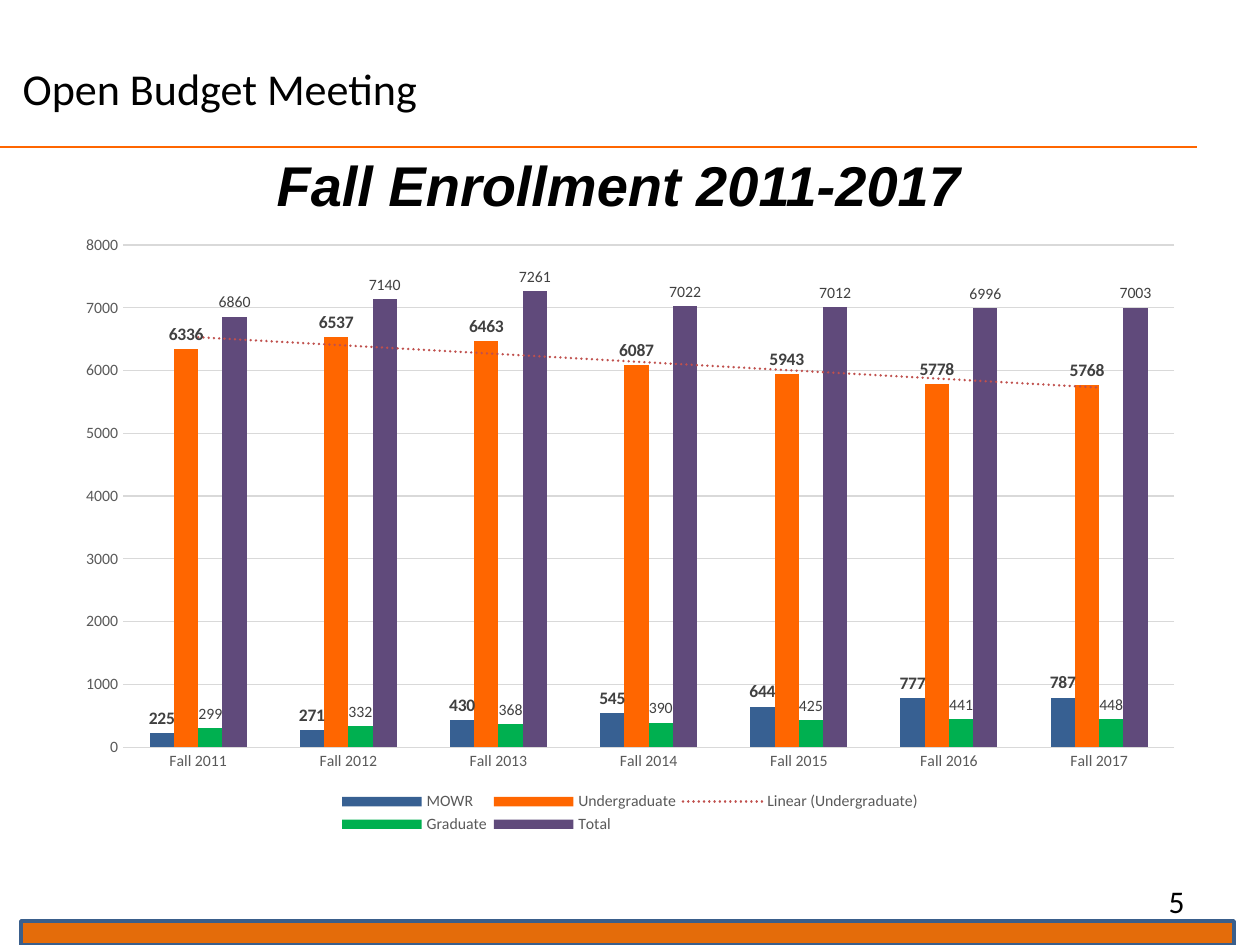
"""Build the fall enrollment slide with its column chart and trend line."""
import pptx
import pptx.chart.data
import pptx.dml.color
import pptx.enum.chart
import pptx.enum.shapes
import pptx.enum.text
import pptx.oxml
import pptx.oxml.ns
import pptx.util

RGBColor = pptx.dml.color.RGBColor
BLACK = RGBColor(0x00, 0x00, 0x00)
ORANGE = RGBColor(0xFF, 0x66, 0x00)
FOOTER_FILL = RGBColor(0xE4, 0x6C, 0x0A)
FOOTER_LINE = RGBColor(0x3A, 0x5F, 0x8C)
BLUE = RGBColor(0x37, 0x60, 0x92)
GREEN = RGBColor(0x00, 0xB0, 0x50)
PURPLE = RGBColor(0x60, 0x4A, 0x7B)
TREND_RED = RGBColor(0xC0, 0x50, 0x4D)
AXIS_GRAY = RGBColor(0x59, 0x59, 0x59)
LABEL_GRAY = RGBColor(0x40, 0x40, 0x40)
GRID_GRAY = RGBColor(0xD9, 0xD9, 0xD9)
PX = 914400 / 126
ALIGN = pptx.enum.text.PP_ALIGN
NAMESPACES = pptx.oxml.ns.nsdecls("c", "a")


def px(*lengths):
    return [round(length * PX) for length in lengths]


def style(font, size, color, name="Calibri", bold=False, italic=False):
    font.size = pptx.util.Pt(size)
    font.color.rgb = color
    font.name = name
    font.bold = bold
    font.italic = italic


deck = pptx.Presentation()
deck.slide_width, deck.slide_height = px(1260, 945)
page = deck.slides.add_slide(deck.slide_layouts[5])

title = page.shapes.title
title.left, title.top, title.width, title.height = px(10, 56, 766, 63)
heading = page.shapes.add_textbox(*px(52, 159, 1134, 50))
number = page.shapes.add_textbox(*px(903, 876, 294, 50))
for box, text, align, size, name, strong in [
    (title, "Open Budget Meeting", ALIGN.LEFT, 25.2, "Calibri", False),
    (heading, "Fall Enrollment 2011-2017", ALIGN.CENTER, 32, "Arial", True),
    (number, "5", ALIGN.RIGHT, 18, "Calibri", False),
]:
    box.text_frame.word_wrap = True
    box.text_frame.vertical_anchor = pptx.enum.text.MSO_ANCHOR.MIDDLE
    para = box.text_frame.paragraphs[0]
    para.alignment = align
    span = para.add_run()
    span.text = text
    style(span.font, size, BLACK, name, strong, strong)

rule = page.shapes.add_connector(
    pptx.enum.shapes.MSO_CONNECTOR.STRAIGHT, *px(0, 147, 1197, 147))
rule.line.color.rgb = ORANGE
rule.line.width = pptx.util.Pt(1.5)
rule._element.spPr.append(pptx.oxml.parse_xml(f"<a:effectLst {NAMESPACES}/>"))

footer = page.shapes.add_shape(
    pptx.enum.shapes.MSO_SHAPE.RECTANGLE, *px(21, 921, 1213, 24))
footer.shadow.inherit = False
footer.fill.solid()
footer.fill.fore_color.rgb = FOOTER_FILL
footer.line.color.rgb = FOOTER_LINE
footer.line.width = pptx.util.Pt(2)

enrollment = [
    ("MOWR", [225, 271, 430, 545, 644, 777, 787], BLUE, 10, True),
    ("Undergraduate", [6336, 6537, 6463, 6087, 5943, 5778, 5768], ORANGE, 10, True),
    ("Graduate", [299, 332, 368, 390, 425, 441, 448], GREEN, 9, False),
    ("Total", [6860, 7140, 7261, 7022, 7012, 6996, 7003], PURPLE, 9, False),
]
data = pptx.chart.data.CategoryChartData()
data.categories = [f"Fall {year}" for year in range(2011, 2018)]
for name, values, *_ in enrollment:
    data.add_series(name, values)
chart = page.shapes.add_chart(
    pptx.enum.chart.XL_CHART_TYPE.COLUMN_CLUSTERED, *px(63, 224, 1134, 620), data).chart
style(chart.font, 10, BLACK)
chart.has_title = False
chart.has_legend = True
chart.legend.position = pptx.enum.chart.XL_LEGEND_POSITION.BOTTOM
chart.legend.include_in_layout = False
style(chart.legend.font, 9, AXIS_GRAY)

plot = chart.plots[0]
plot.gap_width = 219
plot.overlap = 0
plot.vary_by_categories = False
for series, (name, values, color, size, bold) in zip(plot.series, enrollment):
    series.format.fill.solid()
    series.format.fill.fore_color.rgb = color
    labels = series.data_labels
    labels.show_value = True
    labels.position = pptx.enum.chart.XL_LABEL_POSITION.OUTSIDE_END
    style(labels.font, size, LABEL_GRAY, bold=bold)

trend = pptx.oxml.parse_xml(
    f'<c:trendline {NAMESPACES}><c:spPr><a:ln w="19050" cap="rnd"><a:solidFill>'
    f'<a:srgbClr val="{TREND_RED}"/></a:solidFill><a:prstDash val="sysDot"/></a:ln></c:spPr>'
    '<c:trendlineType val="linear"/><c:dispRSqr val="0"/><c:dispEq val="0"/></c:trendline>')
undergraduate = plot.series[1]
undergraduate.data_labels._element.addnext(trend)

for axis in (chart.category_axis, chart.value_axis):
    axis.major_tick_mark = pptx.enum.chart.XL_TICK_MARK.NONE
    axis.minor_tick_mark = pptx.enum.chart.XL_TICK_MARK.NONE
    style(axis.tick_labels.font, 9, AXIS_GRAY)
chart.value_axis.minimum_scale = 0
chart.value_axis.maximum_scale = 8000
chart.value_axis.major_unit = 1000
chart.value_axis.format.line.fill.background()
for line in (chart.category_axis.format.line, chart.value_axis.major_gridlines.format.line):
    line.color.rgb = GRID_GRAY
    line.width = pptx.util.Pt(0.75)

plot_area = chart._chartSpace.chart.plotArea
legend = chart.legend._element
for old in plot_area.findall(pptx.oxml.ns.qn("c:layout")):
    plot_area.remove(old)
for parent, index, target, (x, y, w, h) in [
    (plot_area, 0, '<c:layoutTarget val="inner"/>', (0.053, 0.034, 0.927, 0.81)),
    (legend, 1, "", (0.24, 0.91, 0.52, 0.08)),
]:
    parent.insert(index, pptx.oxml.parse_xml(
        f"<c:layout {NAMESPACES}><c:manualLayout>{target}"
        '<c:xMode val="edge"/><c:yMode val="edge"/>'
        f'<c:x val="{x}"/><c:y val="{y}"/><c:w val="{w}"/><c:h val="{h}"/>'
        "</c:manualLayout></c:layout>"))

deck.save("out.pptx")
